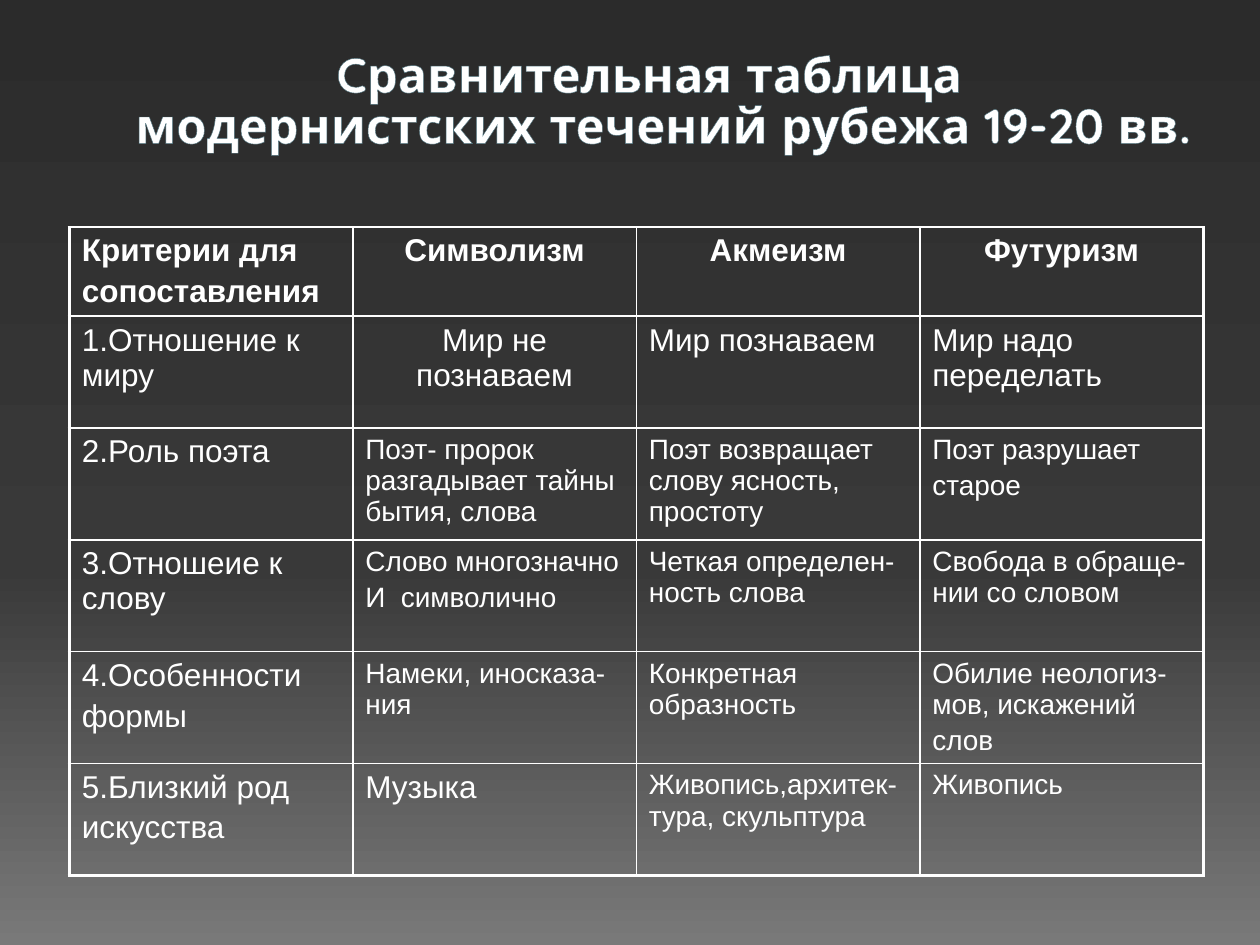
"""Build a slide with a table that compares modernist movements."""
import pptx
import pptx.dml.color
import pptx.enum.text
import pptx.oxml
import pptx.util

Pt = pptx.util.Pt
ALIGN = pptx.enum.text.PP_ALIGN
NS = 'xmlns:a="http://schemas.openxmlformats.org/drawingml/2006/main"'
WHITE = "FFFFFF"


def solid(hue):
    return f'<a:solidFill><a:srgbClr val="{hue}"/></a:solidFill>'


def write(frame, text, size, font="Arial", bold=False, align=ALIGN.LEFT, gap=3):
    frame.text = text
    for i, para in enumerate(frame.paragraphs):
        para.alignment = align
        para.space_before = Pt(gap if i else 0)
        face = para.runs[0].font
        face.name, face.size, face.bold = font, Pt(size), bold
        face.color.rgb = pptx.dml.color.RGBColor.from_string(WHITE)


deck = pptx.Presentation()
deck.slide_width, deck.slide_height = Pt(720), Pt(540)
slide = deck.slides.add_slide(deck.slide_layouts[5])

fill = slide.background.fill
fill.gradient()
fill.gradient_angle = 270
stops = fill.gradient_stops[0]
grad = slide.background.fill._fill._gradFill.gsLst
for stop in list(grad):
    grad.remove(stop)
for pos, hue in [(0, "2B2B2B"), (60, "393939"), (100, "797979")]:
    grad.append(pptx.oxml.parse_xml(
        f'<a:gs {NS} pos="{pos * 1000}"><a:srgbClr val="{hue}"/></a:gs>'))

title = slide.shapes.title
title.left, title.top, title.width, title.height = Pt(22.3), Pt(33.8), Pt(675.4), Pt(90)
frame = title.text_frame
write(frame, "Cравнительная таблица\nмодернистских течений рубежа 19-20 вв.", 27.9,
      font="Quicksand", bold=True, align=ALIGN.CENTER, gap=0)
frame.word_wrap = True
frame.auto_size = pptx.enum.text.MSO_AUTO_SIZE.NONE
frame.vertical_anchor = pptx.enum.text.MSO_ANCHOR.MIDDLE
frame.margin_top, frame.margin_bottom = 0, Pt(40)
for para, indent in zip(frame.paragraphs, (22, 38)):
    para.line_spacing = 0.87
    props = para._p.get_or_add_pPr()
    props.set("marL", str(Pt(indent)))
    props.set("indent", "0")
    para.runs[0].font._element.insert(0, pptx.oxml.parse_xml(
        f'<a:ln {NS} w="{Pt(0.5)}">{solid("4C6F7A")}</a:ln>'))

rows = [
    ["Критерии для\nсопоставления", "Символизм", "Акмеизм", "Футуризм"],
    ["1.Отношение к миру", "Мир не познаваем", "Мир познаваем", "Мир надо переделать"],
    ["2.Роль поэта", "Поэт- пророк разгадывает тайны бытия, слова",
     "Поэт возвращает слову ясность, простоту", "Поэт разрушает\nстарое"],
    ["3.Отношеие к слову", "Слово многозначно\nИ  символично",
     "Четкая определен-ность слова", "Свобода в обраще-нии со словом"],
    ["4.Особенности\nформы", "Намеки, иносказа-ния", "Конкретная образность",
     "Обилие неологиз-мов, искажений\nслов"],
    ["5.Близкий род\nискусства", "Музыка", "Живопись,архитек-тура, скульптура", "Живопись"],
]
last, end = len(rows) - 1, len(rows[0]) - 1
table = slide.shapes.add_table(len(rows), len(rows[0]), Pt(39.6), Pt(129.6),
                               Pt(648), Pt(371)).table
table.first_row = table.horz_banding = False
for col in table.columns:
    col.width = Pt(162)
for r, row in enumerate(rows):
    table.rows[r].height = Pt(63.9 if r else 51.1)
    for c, text in enumerate(row):
        cell = table.cell(r, c)
        large = r < 2 or c == 0 or text == "Музыка"
        mid = (r == 0 and c > 0) or (r, c) == (1, 1)
        write(cell.text_frame, text, 18 if large else 16, bold=r == 0,
              align=ALIGN.CENTER if mid else ALIGN.LEFT)
        cell.fill.background()
        props = cell._tc.get_or_add_tcPr()
        thick = {"L": c == 0, "R": c == end, "T": False, "B": r == last}
        for i, (side, wide) in enumerate(thick.items()):
            props.insert(i, pptx.oxml.parse_xml(
                f'<a:ln{side} {NS} w="{Pt(2.25 if wide else 1)}">{solid(WHITE)}</a:ln{side}>'))

deck.save("out.pptx")
